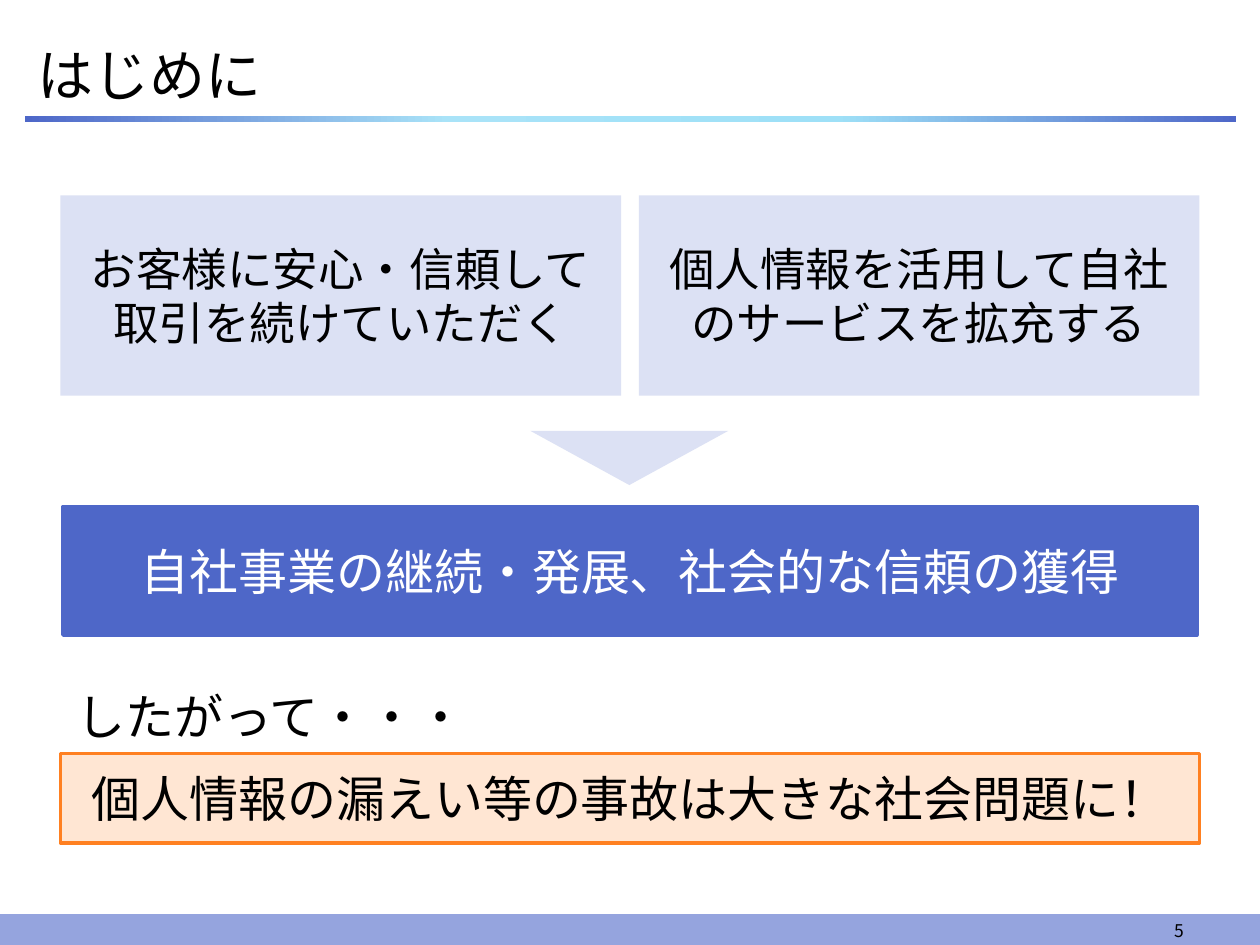
from lxml.etree import SubElement
from pptx import Presentation
from pptx.dml.color import RGBColor
from pptx.enum.shapes import MSO_SHAPE as Shape
from pptx.enum.text import MSO_ANCHOR as Anchor, PP_ALIGN as Align
from pptx.oxml.ns import qn
from pptx.util import Inches, Pt

FONT = "Noto Sans CJK JP"
BLUE, PALE, BLACK, WHITE = "4E67C8", "DCE1F4", "000000", "FFFFFF"
color = RGBColor.from_string

deck = Presentation()
deck.slide_width, deck.slide_height = Inches(10), Inches(7.5)
page = deck.slides.add_slide(deck.slide_layouts[6])


def add_block(kind, place, fill, line=None, width=0):
    box = page.shapes.add_shape(kind, *map(Inches, place))
    box.shadow.inherit = False
    box.fill.solid()
    box.fill.fore_color.rgb = color(fill)
    if line:
        box.line.color.rgb = color(line)
        box.line.width = Pt(width)
    else:
        box.line.fill.background()
    return box


def write(box, text, size, ink=BLACK, align=Align.LEFT, anchor=Anchor.MIDDLE, inset=0.05):
    frame = box.text_frame
    frame.word_wrap = True
    frame.vertical_anchor = anchor
    frame.margin_left = frame.margin_right = Inches(0.1)
    frame.margin_top = frame.margin_bottom = Inches(inset)
    para = frame.paragraphs[0]
    para.alignment = align
    span = para.add_run()
    span.text = text
    span.font.size = Pt(size)
    span.font.name = FONT
    span.font.color.rgb = color(ink)
    SubElement(span.font._element, qn("a:ea"), typeface=FONT)


# Footer band and title rule
add_block(Shape.RECTANGLE, (0, 7.26, 10, 0.24), "95A4DE", "95A4DE", 0.75)
rule = add_block(Shape.RECTANGLE, (0.2, 0.92, 9.61, 0.05), BLUE)
rule.fill.gradient()
rule.fill.gradient_angle = 0
stops = rule._element.spPr.find(qn("a:gradFill")).find(qn("a:gsLst"))
for stop in list(stops):
    stops.remove(stop)
for percent, shade in ((0, BLUE), (35, "A9E3F8"), (67, "9EE0F7"), (100, BLUE)):
    stop = SubElement(stops, qn("a:gs"), pos=str(percent * 1000))
    SubElement(stop, qn("a:srgbClr"), val=shade)

# Plain text: title, page number, lead-in
for place, text, size, align, anchor in (
    ((0.2, 0.26, 9.61, 0.65), "はじめに", 32, Align.LEFT, Anchor.MIDDLE),
    ((7.17, 7.21, 2.33, 0.31), "5", 10, Align.RIGHT, Anchor.BOTTOM),
    ((0.51, 5.4, 7.07, 0.57), "したがって・・・", 28, Align.LEFT, Anchor.TOP),
):
    label = page.shapes.add_textbox(*map(Inches, place))
    write(label, text, size, align=align, anchor=anchor)

# Two aims side by side, leading down to the result
left, aim_width, gap = 0.48, 4.45, 0.14
aims = ("お客様に安心・信頼して取引を続けていただく", "個人情報を活用して自社のサービスを拡充する")
for column, text in enumerate(aims):
    place = (left + column * (aim_width + gap), 1.55, aim_width, 1.59)
    write(add_block(Shape.RECTANGLE, place, PALE), text, 26, align=Align.CENTER, inset=0.16)

add_block(Shape.FLOWCHART_MERGE, (4.21, 3.42, 1.57, 0.43), PALE)

result = add_block(Shape.RECTANGLE, (0.5, 4.02, 9, 1.02), BLUE, BLUE, 2)
write(result, "自社事業の継続・発展、社会的な信頼の獲得", 28, WHITE, Align.CENTER, inset=0.16)

warning = add_block(Shape.RECTANGLE, (left, 5.98, 2 * aim_width + gap, 0.71), "FFE6D3", "FF8021", 2)
write(warning, "個人情報の漏えい等の事故は大きな社会問題に！", 28, align=Align.CENTER, anchor=Anchor.TOP, inset=0.12)

deck.save("out.pptx")
